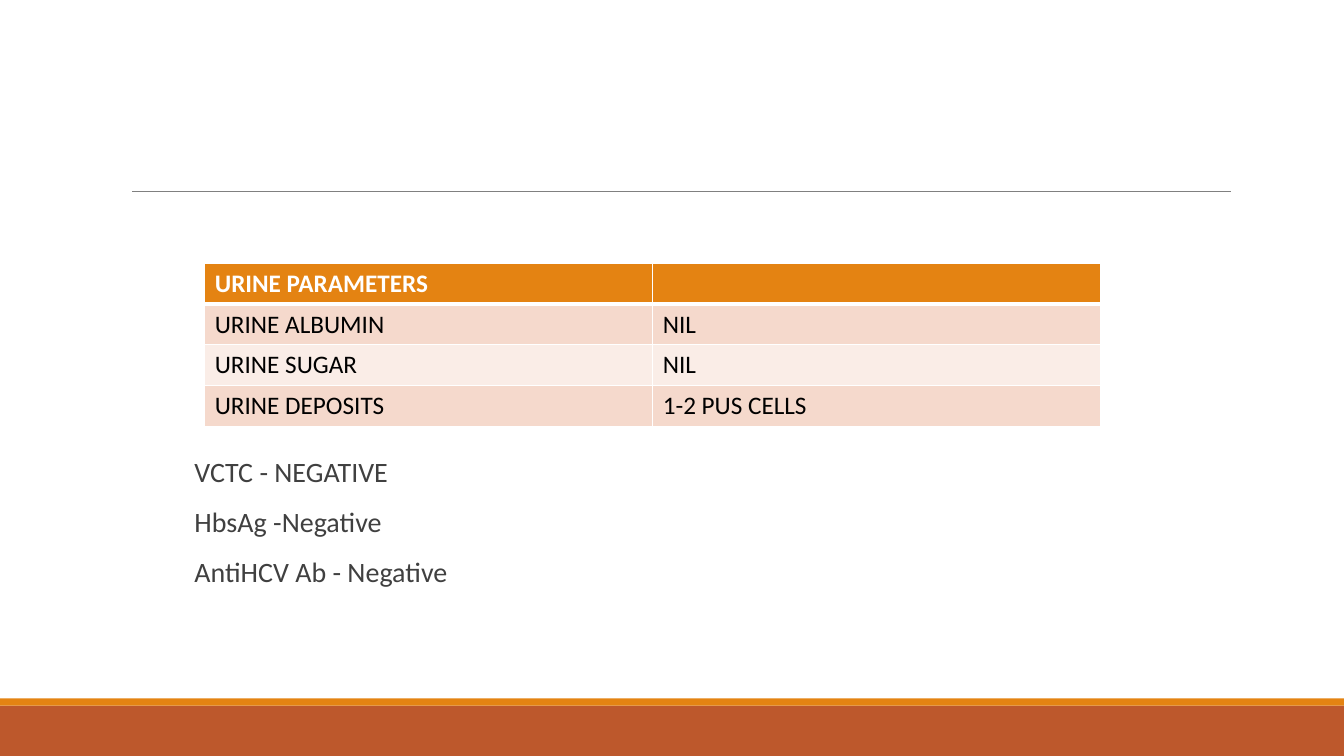
from lxml.etree import SubElement
from pptx import Presentation
from pptx.dml.color import RGBColor
from pptx.enum.shapes import MSO_CONNECTOR, MSO_SHAPE
from pptx.oxml.ns import qn
from pptx.util import Cm, Pt

WHITE = RGBColor(0xFF, 0xFF, 0xFF)
BLACK = RGBColor(0x00, 0x00, 0x00)
DARK = RGBColor(0x40, 0x40, 0x40)
GRAY = RGBColor(0x80, 0x80, 0x80)
RUST = RGBColor(0xBD, 0x58, 0x2C)
ORANGE = RGBColor(0xE4, 0x83, 0x12)
PEACH = RGBColor(0xF5, 0xD9, 0xCC)
PALE = RGBColor(0xFA, 0xED, 0xE7)

URINE = [
    ("URINE PARAMETERS", ""),
    ("URINE ALBUMIN", "NIL"),
    ("URINE SUGAR", "NIL"),
    ("URINE DEPOSITS", "1-2 PUS CELLS"),
]
TESTS = ["VCTC - NEGATIVE", "HbsAg -Negative", "AntiHCV Ab - Negative"]


def write(para, text, size=18, color=BLACK, bold=False):
    """Put formatted text in a paragraph."""
    run = para.add_run()
    run.text = text
    font = run.font
    font.name = "Calibri"
    font.size = Pt(size)
    font.bold = bold
    font.color.rgb = color


def add_bar(slide, top, height, color):
    """Draw a full-width footer bar."""
    bar = slide.shapes.add_shape(
        MSO_SHAPE.RECTANGLE, 0, Cm(top), Cm(33.87), Cm(height))
    bar.shadow.inherit = False
    bar.fill.solid()
    bar.fill.fore_color.rgb = color
    bar.line.fill.background()


def add_rule(slide, left, right, top):
    """Draw the thin line under the title area."""
    rule = slide.shapes.add_connector(
        MSO_CONNECTOR.STRAIGHT, Cm(left), Cm(top), Cm(right), Cm(top))
    rule.line.color.rgb = GRAY
    rule.line.width = Pt(0.5)
    SubElement(rule._element.spPr, qn("a:effectLst"))


def set_edge(cell, side, width):
    """Add a white border to one side of a cell."""
    props = cell._tc.get_or_add_tcPr()
    edge = SubElement(props, qn("a:ln" + side), w=str(Pt(width)))
    fill = SubElement(edge, qn("a:solidFill"))
    SubElement(fill, qn("a:srgbClr"), val=str(WHITE))


def add_grid(slide, rows):
    """Build the urine table with a header and banded rows."""
    table = slide.shapes.add_table(
        len(rows), 2, Cm(5.16), Cm(6.63), Cm(22.58), Cm(4.12)).table
    for r, row in enumerate(rows):
        table.rows[r].height = Cm(1.03)
        head = r == 0
        shade = ORANGE if head else (PALE, PEACH)[r % 2]
        for c, text in enumerate(row):
            cell = table.cell(r, c)
            for side in "LRTB":
                thick = (head and side == "B") or (r == 1 and side == "T")
                set_edge(cell, side, 3 if thick else 1)
            cell.fill.solid()
            cell.fill.fore_color.rgb = shade
            if text:
                write(cell.text_frame.paragraphs[0], text,
                      color=WHITE if head else BLACK, bold=head)


def add_list(slide, lines):
    """Place the test results below the table."""
    box = slide.shapes.add_textbox(Cm(4.9), Cm(11.43), Cm(26), Cm(4.88))
    frame = box.text_frame
    frame.word_wrap = True
    frame.margin_left = frame.margin_right = 0
    for i, line in enumerate(lines):
        para = frame.add_paragraph() if i else frame.paragraphs[0]
        para.line_spacing = 0.9
        para.space_before = Pt(12)
        para.space_after = Pt(2)
        write(para, line, size=20, color=DARK)


def main():
    """Build and save the slide."""
    deck = Presentation()
    deck.slide_width = Cm(33.87)
    deck.slide_height = Cm(19.05)
    slide = deck.slides.add_slide(deck.slide_layouts[6])
    add_bar(slide, 17.78, 1.27, RUST)
    add_bar(slide, 17.6, 0.18, ORANGE)
    add_rule(slide, 3.33, 31.01, 4.83)
    add_list(slide, TESTS)
    add_grid(slide, URINE)
    deck.save("out.pptx")


if __name__ == "__main__":
    main()
